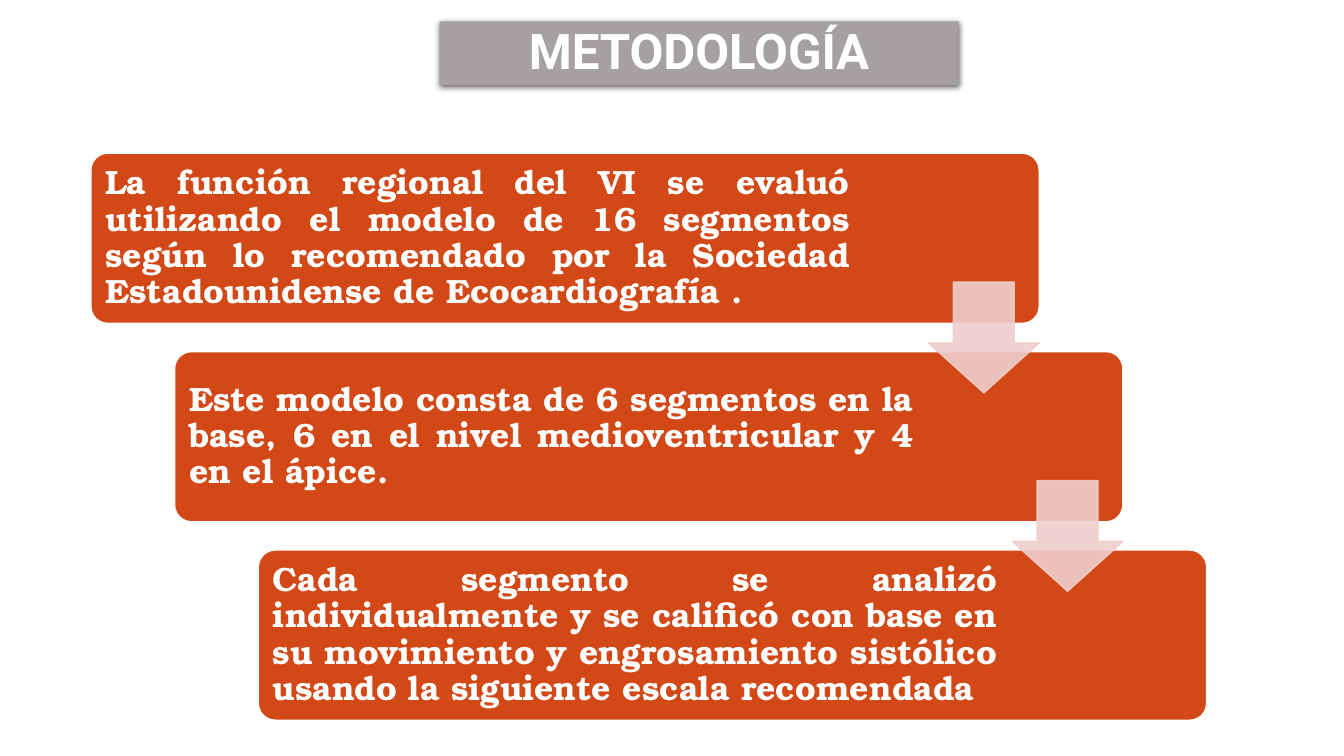
"""Build the methodology slide: a title bar and three stepped boxes joined by arrows."""
from lxml import etree
from pptx import Presentation
from pptx import util as u
from pptx.dml import color
from pptx.enum import shapes, text
from pptx.oxml import ns

TITLE = "METODOLOGÍA"
STEPS = [
    ("La función regional del VI se evaluó utilizando el modelo de 16 segmentos "
     "según lo recomendado por la Sociedad Estadounidense de Ecocardiografía .", 19.25),
    ("Este modelo consta de 6 segmentos en la base, 6 en el nivel "
     "medioventricular y 4 en el ápice.", 18.75),
    ("Cada segmento se analizó individualmente y se calificó con base en su "
     "movimiento y engrosamiento sistólico usando la siguiente escala recomendada", 18.75),
]
WHITE, RUST, PINK, GREY = "FFFFFF", "D34817", "EFCFCC", "A6A1A1"
LEFT, TOP, WIDE, HIGH = 2.29, 3.86, 23.9, 4.29
SHIFT, DROP = 2.11, 5
PAD, INSET = 0.12, 0.25
ARROW = 2.79


def paint(part, tone):
    part.solid()
    part.fore_color.rgb = color.RGBColor.from_string(tone)


def fade(part, share):
    for node in part.iter(ns.qn("a:srgbClr")):
        etree.SubElement(node, ns.qn("a:alpha"), val=str(share * 1000))


def draw(slide, kind, place, fill, edge=None, adjust=()):
    shape = slide.shapes.add_shape(kind, *map(u.Cm, place))
    shape.shadow.inherit = False
    for i, size in enumerate(adjust):
        shape.adjustments[i] = size
    paint(shape.fill, fill)
    if edge:
        paint(shape.line.fill, edge)
        shape.line.width = u.Pt(1)
    else:
        shape.line.fill.background()
    return shape


def write(frame, words, face, size, align):
    frame.word_wrap = True
    frame.vertical_anchor = text.MSO_ANCHOR.MIDDLE
    para = frame.paragraphs[0]
    para.alignment = align
    para.line_spacing = 0.9
    run = para.add_run()
    run.text = words
    run.font.name = face
    run.font.size = u.Pt(size)
    run.font.bold = True
    paint(run.font.fill, WHITE)


def shade(shape):
    glow = shape._element.spPr.find(ns.qn("a:effectLst"))
    drop = etree.SubElement(glow, ns.qn("a:outerShdw"), blurRad=str(u.Pt(4)),
                            dist=str(u.Pt(1.5)), dir="5400000", rotWithShape="0")
    tone = etree.SubElement(drop, ns.qn("a:srgbClr"), val="000000")
    etree.SubElement(tone, ns.qn("a:alpha"), val="60000")


def main():
    deck = Presentation()
    deck.slide_width, deck.slide_height = u.Cm(33.87), u.Cm(19.05)
    slide = deck.slides.add_slide(deck.slide_layouts[6])
    spots = [(LEFT + i * SHIFT, TOP + i * DROP) for i in range(len(STEPS))]

    for (x, y), (words, width) in zip(spots, STEPS):
        draw(slide, shapes.MSO_SHAPE.ROUNDED_RECTANGLE, (x, y, WIDE, HIGH),
             RUST, WHITE, [0.1])
        place = (x + PAD, y + PAD, width, HIGH - 2 * PAD)
        frame = slide.shapes.add_textbox(*map(u.Cm, place)).text_frame
        frame.margin_left = frame.margin_right = u.Cm(INSET)
        frame.margin_top = frame.margin_bottom = u.Cm(INSET)
        write(frame, words, "TeX Gyre Bonum", 24, text.PP_ALIGN.JUSTIFY)

    for x, y in spots[:-1]:
        place = (x + WIDE - ARROW, y + 3.25, ARROW, ARROW)
        arrow = draw(slide, shapes.MSO_SHAPE.DOWN_ARROW, place, PINK, PINK, [0.55, 0.45])
        fade(arrow._element.spPr, 90)

    bar = draw(slide, shapes.MSO_SHAPE.RECTANGLE, (11.08, 0.54, 13.08, 1.6), GREY)
    shade(bar)
    write(bar.text_frame, TITLE, "Roboto", 35.1, text.PP_ALIGN.CENTER)
    deck.save("out.pptx")


if __name__ == "__main__":
    main()
